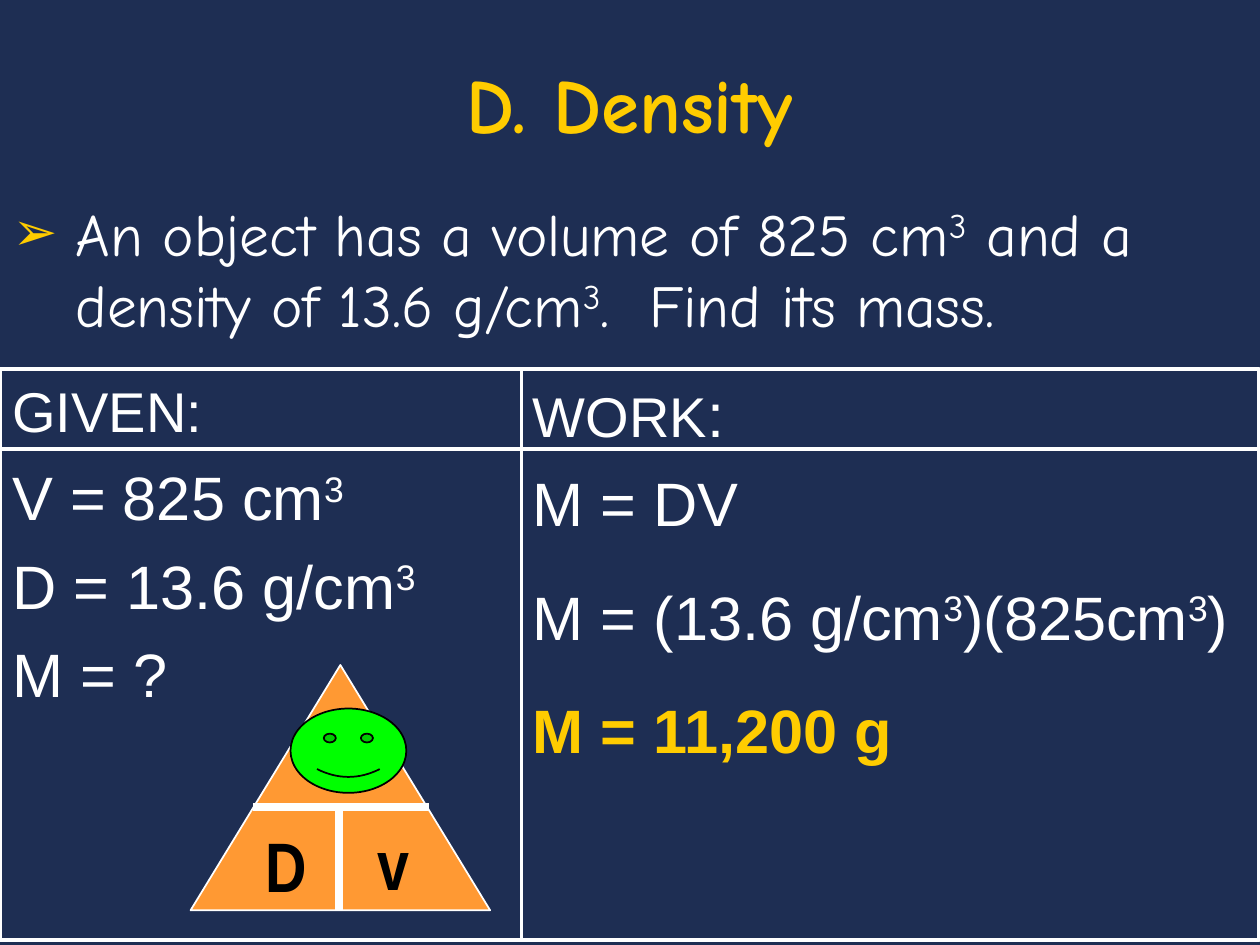
from dataclasses import dataclass
from lxml.etree import SubElement
from pptx import Presentation
from pptx.dml.color import RGBColor
from pptx.enum.shapes import MSO_CONNECTOR as Line, MSO_SHAPE as Shape
from pptx.enum.text import MSO_ANCHOR as Anchor, MSO_AUTO_SIZE as AutoSize, PP_ALIGN as Align
from pptx.oxml.ns import qn
from pptx.util import Pt


@dataclass(frozen=True)
class Theme:
    navy: RGBColor = RGBColor.from_string("1E2E53")
    gold: RGBColor = RGBColor.from_string("FFCC00")
    white: RGBColor = RGBColor.from_string("FFFFFF")
    black: RGBColor = RGBColor.from_string("000000")
    orange: RGBColor = RGBColor.from_string("FF9933")
    green: RGBColor = RGBColor.from_string("00FF00")
    display: str = "Comic Neue"
    plain: str = "Arial"
    narrow: str = "Arial Narrow"
    title: int = 44
    letter: int = 40
    equation: int = 35
    problem: int = 34
    heading: int = 32


theme = Theme()


def write(para, text, size, font, color, bold=False):
    """Add text to a paragraph, raising every ³ as a superscript 3."""
    for part in text.replace("³", "|³|").split("|"):
        if not part:
            continue
        span = para.add_run()
        span.text = "3" if part == "³" else part
        formats = {"size": Pt(size), "name": font, "bold": bold}
        for name, value in formats.items():
            setattr(span.font, name, value)
        span.font.color.rgb = color
        if part == "³":
            span.font._element.set("baseline", "30000")


def draw_line(shapes, x1, y1, x2, y2, width):
    line = shapes.add_connector(Line.STRAIGHT, Pt(x1), Pt(y1), Pt(x2), Pt(y2))
    line.line.color.rgb = theme.white
    line.line.width = Pt(width)
    SubElement(line._element.spPr, qn("a:effectLst"))


deck = Presentation()
deck.slide_width, deck.slide_height = Pt(720), Pt(540)
page = deck.slides.add_slide(deck.slide_layouts[1])
page.background.fill.solid()
page.background.fill.fore_color.rgb = theme.navy

# Title and problem statement
title, problem = page.placeholders
for box, place, anchor in (
    (title, (54, 23, 612, 66), Anchor.BOTTOM),
    (problem, (0, 108.7, 720, 159), Anchor.TOP),
):
    box.left, box.top, box.width, box.height = map(Pt, place)
    box.text_frame.auto_size = AutoSize.NONE
    box.text_frame.vertical_anchor = anchor

para = title.text_frame.paragraphs[0]
para.alignment = Align.CENTER
write(para, "D. Density", theme.title, theme.display, theme.gold, True)

para = problem.text_frame.paragraphs[0]
para.space_before = Pt(3.5)
write(para, "An object has a volume of 825 cm³ and a density of 13.6 g/cm³.  Find its mass.",
      theme.problem, theme.display, theme.white)
bullet = para._p.get_or_add_pPr()
bullet.set("marL", str(Pt(36)))
bullet.set("indent", str(Pt(-36)))
bullet_color = SubElement(bullet, qn("a:buClr"))
SubElement(bullet_color, qn("a:srgbClr"), val=str(theme.gold))
SubElement(bullet, qn("a:buSzPct"), val="90000")
SubElement(bullet, qn("a:buChar"), char="➢")

# Worksheet frame
frame = page.shapes.add_shape(Shape.RECTANGLE, Pt(0), Pt(211), Pt(719.3), Pt(326.2))
frame.shadow.inherit = False
frame.fill.solid()
frame.fill.fore_color.rgb = theme.navy
frame.line.color.rgb = theme.white
frame.line.width = Pt(2.25)

# Given and work columns: space before, text, size, colour, bold
heading = (theme.heading, theme.white, False)
equation = (theme.equation, theme.white, False)
answer = (theme.equation, theme.gold, True)
columns = (
    (0, 297.4, 204.5, (
        (3.5, "GIVEN:", heading),
        (9, "V = 825 cm³", equation),
        (8.5, "D = 13.6 g/cm³", equation),
        (8.5, "M = ?", equation),
    )),
    (297.4, 422.6, 278, (
        (3.5, "WORK", heading),
        (8.5, "M = DV", equation),
        (23, "M = (13.6 g/cm³)(825cm³)", equation),
        (23, "M = 11,200 g", answer),
    )),
)
for left, width, height, rows in columns:
    box = page.shapes.add_textbox(Pt(left), Pt(211.7), Pt(width), Pt(height))
    box.text_frame.word_wrap = True
    for index, (gap, text, (size, color, bold)) in enumerate(rows):
        para = box.text_frame.add_paragraph() if index else box.text_frame.paragraphs[0]
        para.space_before = Pt(gap)
        write(para, text, size, theme.plain, color, bold)
        if text == "WORK":
            write(para, ":", theme.equation, theme.plain, color)

# Column and heading rules
draw_line(page.shapes, 298, 211, 298, 536.4, 2.25)
draw_line(page.shapes, 0, 256.5, 720, 256.5, 2.25)

# Formula triangle
formula = page.shapes.add_group_shape().shapes
triangle = formula.add_shape(Shape.ISOSCELES_TRIANGLE, Pt(108.9), Pt(380), Pt(171.2), Pt(140.2))
draw_line(formula, 144.7, 461.2, 245, 461.2, 4.5)
draw_line(formula, 193.9, 461.2, 193.9, 520, 4.5)
for letter, left, top in (("D", 144.7, 466.6), ("v", 208.6, 465.1)):
    box = formula.add_textbox(Pt(left), Pt(top), Pt(39), Pt(55.4))
    box.text_frame.word_wrap = True
    para = box.text_frame.paragraphs[0]
    para.space_before = Pt(3.5)
    write(para, letter, theme.letter, theme.narrow, theme.black, True)

# Smiley covering the unknown
smiley = page.shapes.add_shape(Shape.SMILEY_FACE, Pt(166), Pt(404.9), Pt(66.2), Pt(48.2))
for shape, fill, outline in (
    (triangle, theme.orange, theme.white),
    (smiley, theme.green, theme.black),
):
    shape.shadow.inherit = False
    shape.fill.solid()
    shape.fill.fore_color.rgb = fill
    shape.line.color.rgb = outline
    shape.line.width = Pt(1)

deck.save("out.pptx")
